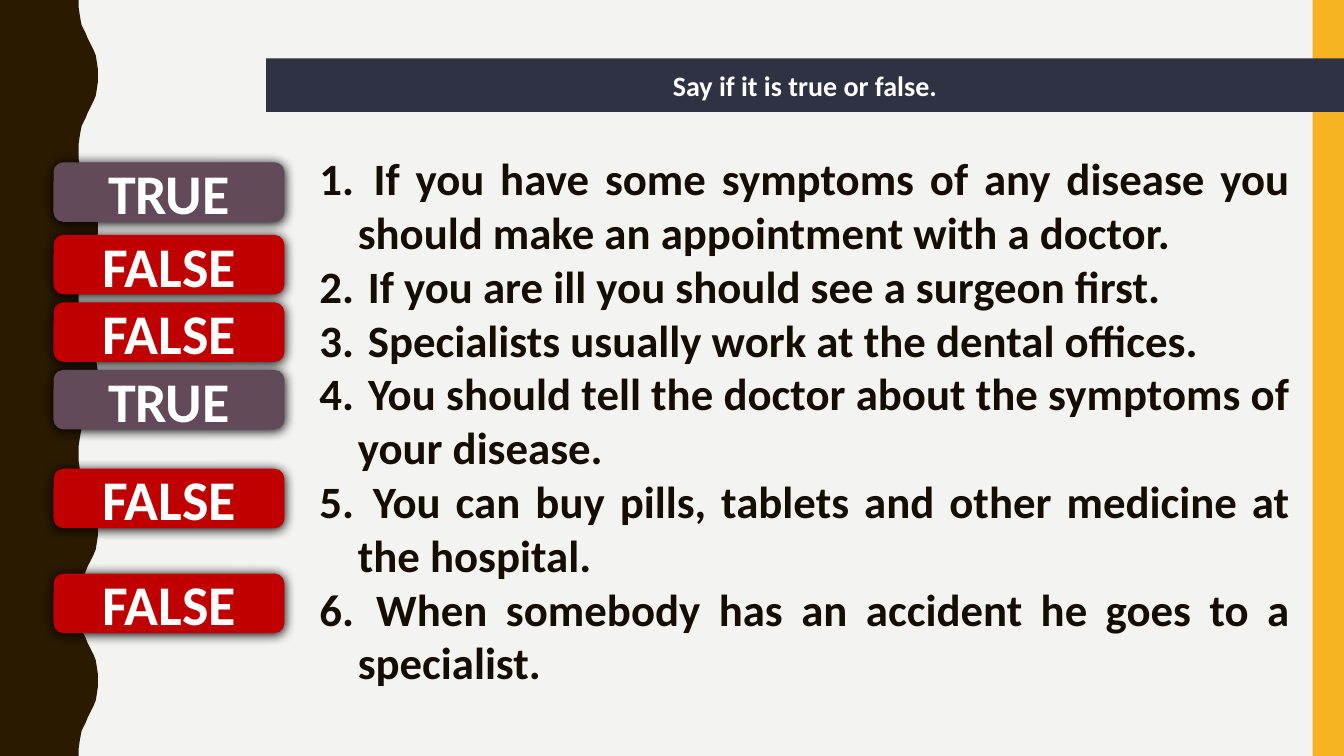
from dataclasses import dataclass

from lxml.etree import SubElement as Sub
from pptx import Presentation
from pptx.dml.color import RGBColor as Rgb
from pptx.enum.shapes import MSO_SHAPE as Kind
from pptx.enum.text import MSO_ANCHOR as Anchor, MSO_AUTO_SIZE as Fit, PP_ALIGN as Align
from pptx.oxml.ns import qn
from pptx.util import Inches, Pt


@dataclass(frozen=True)
class Theme:
    font: str = "Calibri"
    paper: str = "F3F3F2"
    wood: str = "2A1A00"
    gold: str = "F8B323"
    navy: str = "2F3242"
    plum: str = "624A58"
    red: str = "C00000"
    ink: str = "150D00"
    white: str = "FFFFFF"
    title: int = 20
    body: int = 32
    label: int = 40


THEME = Theme()
WIDE, HIGH = Inches(13.33), Inches(7.5)

# Half a wave: (sideways, down) in 1/750 of the slide height
BEND = [(0, 0), (0, 7), (1, 14), (2, 20), (3, 25), (5, 29), (7, 33), (9, 38),
        (11, 42), (13, 46), (15, 50), (17, 55), (18, 61), (19, 68), (19, 75)]
WAVES, PERIOD, EDGE = 5, 150, 78

# Statement, whether it is true, top of its label in percent of the height
QUIZ = [
    ("If you have some symptoms of any disease you should make an appointment with a doctor.",
     True, 21.47),
    ("If you are ill you should see a surgeon first.", False, 31.07),
    ("Specialists usually work at the dental offices.", False, 40),
    ("You should tell the doctor about the symptoms of your disease.", True, 48.93),
    ("You can buy pills, tablets and other medicine at the hospital.", False, 62),
    ("When somebody has an accident he goes to a specialist.", False, 75.87),
]


def area(x, y, w, h):
    """Turn percentages of the slide's width and height into lengths."""
    return [round(part * side / 100) for part, side in zip((x, y, w, h), (WIDE, HIGH) * 2)]


def paint(shape, color):
    shape.fill.solid()
    shape.fill.fore_color.rgb = Rgb.from_string(color)
    shape.line.fill.background()
    shape.shadow.inherit = False


def style(para, size, color, align):
    para.alignment = align
    font = para.font
    font.name, font.size, font.bold = THEME.font, Pt(size), True
    font.color.rgb = Rgb.from_string(color)


def panel(slide, kind, box, color, text="", size=THEME.title):
    shape = slide.shapes.add_shape(kind, *area(*box))
    paint(shape, color)
    if text:
        frame = shape.text_frame
        frame.text = text
        frame.word_wrap = True
        frame.vertical_anchor = Anchor.MIDDLE
        style(frame.paragraphs[0], size, THEME.white, Align.CENTER)
    return shape


def shade(shape):
    """Give a painted shape a soft black shadow just below it."""
    glow = Sub(shape.element.spPr.find(qn("a:effectLst")), qn("a:outerShdw"),
               blurRad=str(Pt(8.5)), dist=str(Pt(1)), dir="5400000", rotWithShape="0")
    Sub(glow, qn("a:srgbClr"), val="000000")


def wave(slide):
    half = [(EDGE + x, y) for x, y in BEND]
    back = [(x, PERIOD - y) for x, y in reversed(half[:-1])]
    side = [(x, y + PERIOD * turn) for turn in range(WAVES) for x, y in half + back]
    pen = slide.shapes.build_freeform(0, 0, scale=HIGH / (WAVES * PERIOD))
    pen.add_line_segments(side + [(0, WAVES * PERIOD)], close=True)
    paint(pen.convert_to_shape(), THEME.wood)


def number(para):
    """Number a paragraph 1., 2., 3. with a hanging indent."""
    props = para._p.get_or_add_pPr()
    hang = Inches(0.38)
    props.set("marL", str(hang))
    props.set("indent", str(-hang))
    Sub(props, qn("a:buFont"), typeface="+mj-lt")
    Sub(props, qn("a:buAutoNum"), type="arabicPeriod")


def listing(slide, box, lines):
    frame = slide.shapes.add_textbox(*area(*box)).text_frame
    frame.word_wrap = True
    frame.auto_size = Fit.SHAPE_TO_FIT_TEXT
    frame.text = "\n".join(f" {line}" for line in lines)
    for para in frame.paragraphs:
        number(para)
        style(para, THEME.body, THEME.ink, Align.JUSTIFY)


def main():
    deck = Presentation()
    deck.slide_width, deck.slide_height = WIDE, HIGH
    slide = deck.slides.add_slide(deck.slide_layouts[6])
    ground = slide.background.fill
    ground.solid()
    ground.fore_color.rgb = Rgb.from_string(THEME.paper)

    wave(slide)
    panel(slide, Kind.RECTANGLE, (97.67, 0, 2.33, 100), THEME.gold)
    panel(slide, Kind.RECTANGLE, (19.8, 7.73, 80.2, 7.07), THEME.navy,
          "Say if it is true or false.")
    listing(slide, (23.03, 19.33, 73.74, 73.2), [line for line, _, _ in QUIZ])
    for _, right, top in QUIZ:
        word, color = ("TRUE", THEME.plum) if right else ("FALSE", THEME.red)
        shade(panel(slide, Kind.ROUNDED_RECTANGLE, (3.98, top, 17.18, 7.87),
                    color, word, THEME.label))
    deck.save("out.pptx")


if __name__ == "__main__":
    main()
